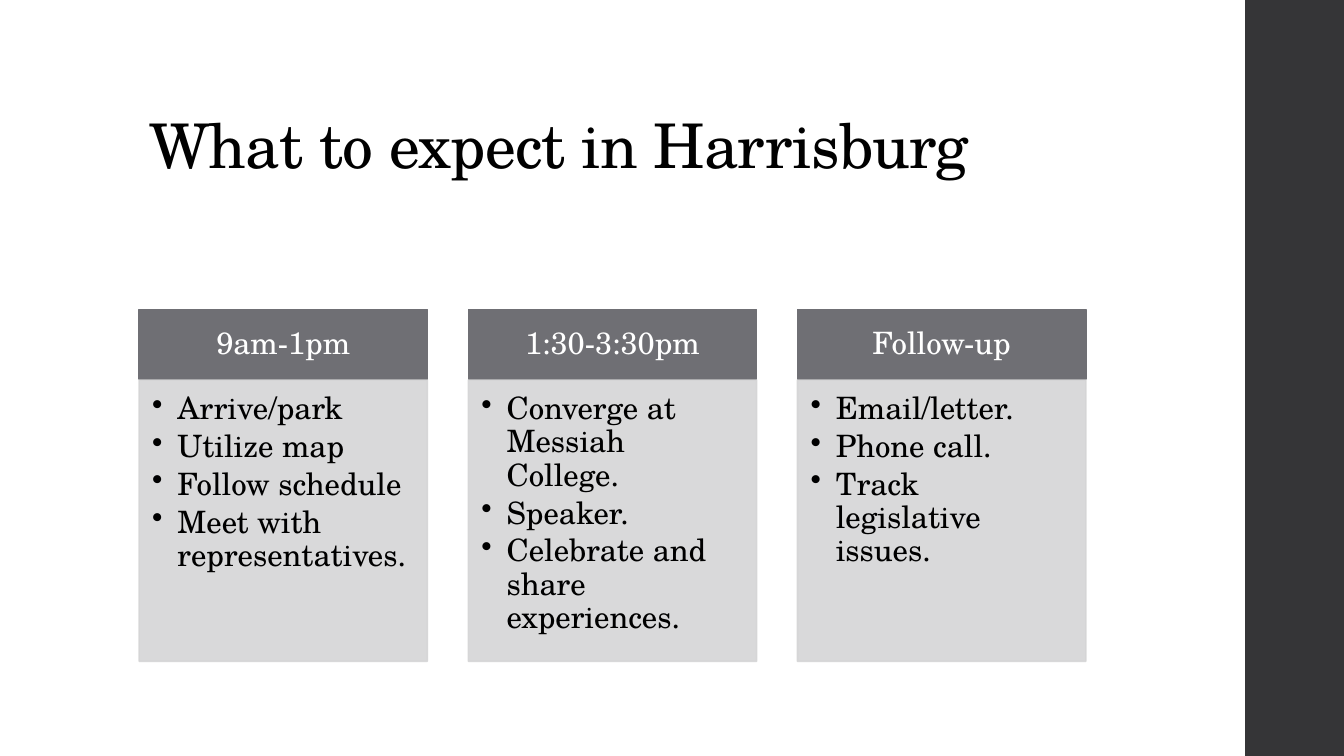
from dataclasses import dataclass
from typing import Any

from lxml.etree import SubElement
from pptx import Presentation
from pptx.dml.color import RGBColor
from pptx.enum.shapes import MSO_SHAPE
from pptx.enum.text import MSO_ANCHOR, PP_ALIGN
from pptx.oxml.ns import qn
from pptx.util import Inches, Pt

FONT = "TeX Gyre Schola"
SLIDE_WIDTH, SLIDE_HEIGHT = 13.33, 7.5
GRID_LEFT, COLUMN_WIDTH, COLUMN_PITCH = 1.38, 2.86, 3.265
HEADER_TOP, HEADER_HEIGHT = 3.07, 0.69
BODY_TOP, BODY_HEIGHT = 3.77, 2.79
BULLET_INDENT = Inches(0.25)


@dataclass(frozen=True)
class Box:
    left: float
    top: float
    width: float
    height: float

    def lengths(self) -> list[int]:
        return [Inches(value) for value in (self.left, self.top, self.width, self.height)]


@dataclass(frozen=True)
class Stage:
    time: str
    steps: tuple[str, ...]


STAGES = (
    Stage("9am-1pm", ("Arrive/park", "Utilize map", "Follow schedule",
                      "Meet with representatives.")),
    Stage("1:30-3:30pm", ("Converge at Messiah College.", "Speaker.",
                          "Celebrate and share experiences.")),
    Stage("Follow-up", ("Email/letter.", "Phone call.", "Track legislative issues.")),
)

TITLE_FRAME = {"vertical_anchor": MSO_ANCHOR.BOTTOM}
HEADER_FRAME = {
    "vertical_anchor": MSO_ANCHOR.MIDDLE,
    "margin_left": Inches(0.17), "margin_right": Inches(0.17),
    "margin_top": Inches(0.1), "margin_bottom": Inches(0.1),
}
BODY_FRAME = {
    "vertical_anchor": MSO_ANCHOR.TOP,
    "margin_left": Inches(0.13), "margin_right": Inches(0.17),
    "margin_top": Inches(0.13), "margin_bottom": Inches(0.19),
}
LEFT_PARAGRAPH = {"alignment": PP_ALIGN.LEFT, "line_spacing": 0.9}
HEADER_PARAGRAPH = {"alignment": PP_ALIGN.CENTER, "line_spacing": 0.9}
STEP_PARAGRAPH = LEFT_PARAGRAPH | {"space_after": Pt(3.3)}


def color(value: str) -> RGBColor:
    return RGBColor.from_string(value)


def apply_format(target: Any, values: dict[str, Any]) -> None:
    for name, value in values.items():
        setattr(target, name, value)


def write_text(shape: Any, lines: tuple[str, ...], frame_format: dict[str, Any],
               paragraph_format: dict[str, Any], size: float, ink: str) -> None:
    frame = shape.text_frame
    apply_format(frame, {"word_wrap": True} | frame_format)
    frame.text = "\n".join(lines)
    for paragraph in frame.paragraphs:
        apply_format(paragraph, paragraph_format)
        for run in paragraph.runs:
            apply_format(run.font, {"name": FONT, "size": Pt(size)})
            run.font.color.rgb = color(ink)


def add_rectangle(slide: Any, box: Box, fill: str, outlined: bool = True) -> Any:
    shape = slide.shapes.add_shape(MSO_SHAPE.RECTANGLE, *box.lengths())
    shape.shadow.inherit = False
    shape.fill.solid()
    shape.fill.fore_color.rgb = color(fill)
    if outlined:
        shape.line.color.rgb = color(fill)
        shape.line.width = Pt(1.1)
    else:
        shape.line.fill.background()
    return shape


def set_opacity(shape: Any, percent: int) -> None:
    """Apply one opacity to both the fill and the outline."""
    for element in shape._element.spPr.iter(qn("a:srgbClr")):
        SubElement(element, qn("a:alpha"), val=str(percent * 1000))


def add_bullets(shape: Any) -> None:
    for paragraph in shape.text_frame.paragraphs:
        properties = paragraph._p.get_or_add_pPr()
        properties.set("marL", str(BULLET_INDENT))
        properties.set("indent", str(-BULLET_INDENT))
        SubElement(properties, qn("a:buChar"), char="•")


def add_title(slide: Any, text: str) -> None:
    title = slide.shapes.add_textbox(*Box(GRID_LEFT, 0.4, 10.6, 1.45).lengths())
    write_text(title, (text,), TITLE_FRAME, LEFT_PARAGRAPH, 44, "000000")
    run = title.text_frame.paragraphs[0].runs[0]
    run.font._element.set("spc", "-50")


def add_stage(slide: Any, column: int, stage: Stage) -> None:
    left = GRID_LEFT + column * COLUMN_PITCH
    header = add_rectangle(slide, Box(left, HEADER_TOP, COLUMN_WIDTH, HEADER_HEIGHT), "6F6F74")
    write_text(header, (stage.time,), HEADER_FRAME, HEADER_PARAGRAPH, 22, "FFFFFF")
    body = add_rectangle(slide, Box(left, BODY_TOP, COLUMN_WIDTH, BODY_HEIGHT), "D5D5D6")
    set_opacity(body, 90)
    write_text(body, stage.steps, BODY_FRAME, STEP_PARAGRAPH, 22, "000000")
    add_bullets(body)


def main() -> None:
    presentation = Presentation()
    presentation.slide_width = Inches(SLIDE_WIDTH)
    presentation.slide_height = Inches(SLIDE_HEIGHT)
    slide = presentation.slides.add_slide(presentation.slide_layouts[6])
    add_rectangle(slide, Box(12.35, 0, SLIDE_WIDTH - 12.35, SLIDE_HEIGHT), "353537", outlined=False)
    add_title(slide, "What to expect in Harrisburg")
    for column, stage in enumerate(STAGES):
        add_stage(slide, column, stage)
    presentation.save("out.pptx")


if __name__ == "__main__":
    main()
